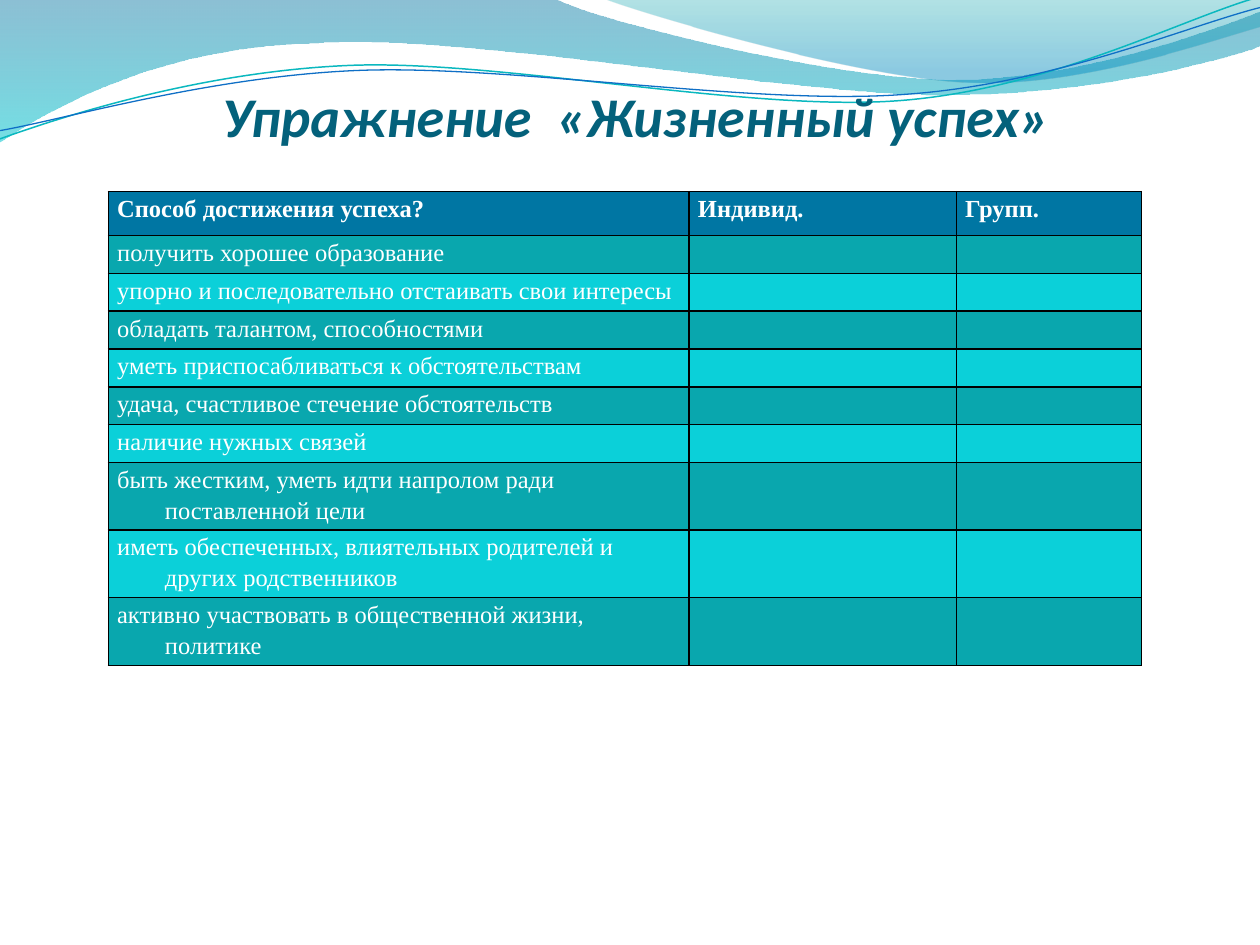
from lxml.etree import SubElement
from pptx import Presentation
from pptx.dml.color import RGBColor
from pptx.enum.text import MSO_ANCHOR, PP_ALIGN
from pptx.oxml import parse_xml
from pptx.oxml.ns import nsdecls, qn
from pptx.util import Inches, Pt


def color(hex_code):
    return RGBColor.from_string(hex_code)


def add_curve(start, segments, closed):
    """Draw an outline; a segment of one point is straight, of three a Bézier."""
    builder = slide.shapes.build_freeform(Inches(start[0]), Inches(start[1]), scale=1.0)
    points = [(Inches(x), Inches(y)) for segment in segments for x, y in segment]
    builder.add_line_segments(points, close=closed)
    shape = builder.convert_to_shape()
    shape.shadow.inherit = False
    outline = shape._element.find(".//" + qn("a:path"))
    lines = iter(outline.findall(qn("a:lnTo")))
    for segment in segments:
        parts = [next(lines) for _ in segment]
        if len(segment) == 3:
            bezier = parse_xml(f"<a:cubicBezTo {nsdecls('a')}/>")
            parts[0].addprevious(bezier)
            for part in parts:
                bezier.append(part[0])
                outline.remove(part)
    return shape


prs = Presentation()
prs.slide_width, prs.slide_height = Inches(10), Inches(7.5)
slide = prs.slides.add_slide(prs.slide_layouts[6])

# Translucent waves: start, segments, gradient stops (position, colour, opacity)
waves = [
    ((0, 0), [
        [(4.4, -0.01)],
        [(4.76, 0.17), (6.64, 0.63), (7.58, 0.63)],
        [(8.53, 0.63), (9.58, 0.26), (10, 0.09)],
        [(10.01, 0.36)],
        [(9.83, 0.44), (8.7, 0.76), (7.46, 0.75)],
        [(6.22, 0.75), (3.82, 0.28), (2.57, 0.34)],
        [(1.29, 0.36), (0.46, 0.83), (-0.01, 1.13)],
    ], [(0, "0074A1", 45), (100, "00C6CF", 55)]),
    ((4.79, -0.01), [
        [(5.09, 0.11), (6.82, 0.62), (7.69, 0.65)],
        [(8.56, 0.69), (9.61, 0.32), (10, 0.21)],
        [(10, 0)],
    ], [(0, "00A1A9", 30), (80, "008BBF", 45)]),
]
for start, segments, stops in waves:
    wave = add_curve(start, segments, closed=True)
    wave.line.fill.background()
    stop_xml = "".join(
        f'<a:gs pos="{position * 1000}"><a:srgbClr val="{code}">'
        f'<a:alpha val="{opacity * 1000}"/></a:srgbClr></a:gs>'
        for position, code, opacity in stops
    )
    wave._element.spPr.find(qn("a:custGeom")).addnext(parse_xml(
        f'<a:gradFill {nsdecls("a")} rotWithShape="1"><a:gsLst>{stop_xml}</a:gsLst>'
        '<a:lin ang="5400000" scaled="0"/></a:gradFill>'
    ))

# Thin swooshes over the waves
swooshes = [
    ((-0.02, 1.11), [
        [(0.48, 0.93), (1.58, 0.57), (2.77, 0.52)],
        [(3.95, 0.47), (5.93, 0.89), (7.13, 0.8)],
        [(8.33, 0.71), (9.38, 0.15), (9.98, -0.02)],
    ], "0AB8BF", 0.85),
    ((-0.02, 1.04), [
        [(0.47, 0.96), (1.64, 0.61), (2.83, 0.56)],
        [(4.03, 0.51), (5.97, 0.84), (7.17, 0.75)],
        [(8.36, 0.67), (9.41, 0.21), (10, 0.06)],
    ], "0F6FC6", 0.75),
]
for start, segments, code, width in swooshes:
    swoosh = add_curve(start, segments, closed=False)
    swoosh.fill.background()
    swoosh.line.color.rgb = color(code)
    swoosh.line.width = Pt(width)

# Title
title = slide.shapes.add_textbox(Inches(0.55), Inches(0.55), Inches(9), Inches(0.63)).text_frame
title.word_wrap = True
title.vertical_anchor = MSO_ANCHOR.BOTTOM
title.margin_left = title.margin_right = title.margin_bottom = 0
title.margin_top = Inches(0.05)
title.text = "Упражнение  «Жизненный успех»"
title.paragraphs[0].alignment = PP_ALIGN.CENTER
title_font = title.paragraphs[0].runs[0].font
title_font.name, title_font.size = "Calibri", Pt(32)
title_font.bold = title_font.italic = True
title_font.color.rgb = color("04617B")

# Table of ways to succeed
ways = [
    "получить хорошее образование",
    "упорно и последовательно отстаивать свои интересы",
    "обладать талантом, способностями",
    "уметь приспосабливаться к обстоятельствам",
    "удача, счастливое стечение обстоятельств",
    "наличие нужных связей",
    "быть жестким, уметь идти напролом ради поставленной цели",
    "иметь обеспеченных, влиятельных родителей и других родственников",
    "активно участвовать в общественной жизни, политике",
]
rows = [["Способ достижения успеха?", "Индивид.", "Групп."]] + [[way, "", ""] for way in ways]
column_widths = [4.61, 2.12, 1.47]
table = slide.shapes.add_table(
    len(rows), len(column_widths), Inches(0.86), Inches(1.52), Inches(8.2), Inches(3.05)
).table
for column, width in zip(table.columns, column_widths):
    column.width = Inches(width)

for r, texts in enumerate(rows):
    header = r == 0
    table.rows[r].height = Inches(0.35 if header else 0.3)
    fill = "0076A3" if header else ("09A7AE" if r % 2 else "0BD0D9")
    for c, text in enumerate(texts):
        cell = table.cell(r, c)
        cell.margin_left = cell.margin_right = Inches(0.07)
        cell.margin_top = cell.margin_bottom = 0
        cell.fill.solid()
        cell.fill.fore_color.rgb = color(fill)
        for i, side in enumerate(("lnL", "lnR", "lnT", "lnB")):
            cell._tc.tcPr.insert(i, parse_xml(
                f'<a:{side} {nsdecls("a")} w="12700"><a:solidFill>'
                f'<a:srgbClr val="000000"/></a:solidFill></a:{side}>'
            ))
        paragraph = cell.text_frame.paragraphs[0]
        if not text:
            # Keeps empty cells from stretching their row
            SubElement(paragraph._p, qn("a:endParaRPr"), sz="1400")
            continue
        cell.text_frame.text = text
        paragraph = cell.text_frame.paragraphs[0]
        paragraph.line_spacing = 1.15
        paragraph.space_before = paragraph.space_after = Pt(5)
        properties = paragraph._p.get_or_add_pPr()
        properties.set("marL", str(Inches(0.38)))
        properties.set("indent", str(-Inches(0.38)))
        font = paragraph.runs[0].font
        font.name, font.size, font.bold = "Times New Roman", Pt(14), header
        font.color.rgb = color("FFFFFF")

prs.save("out.pptx")
